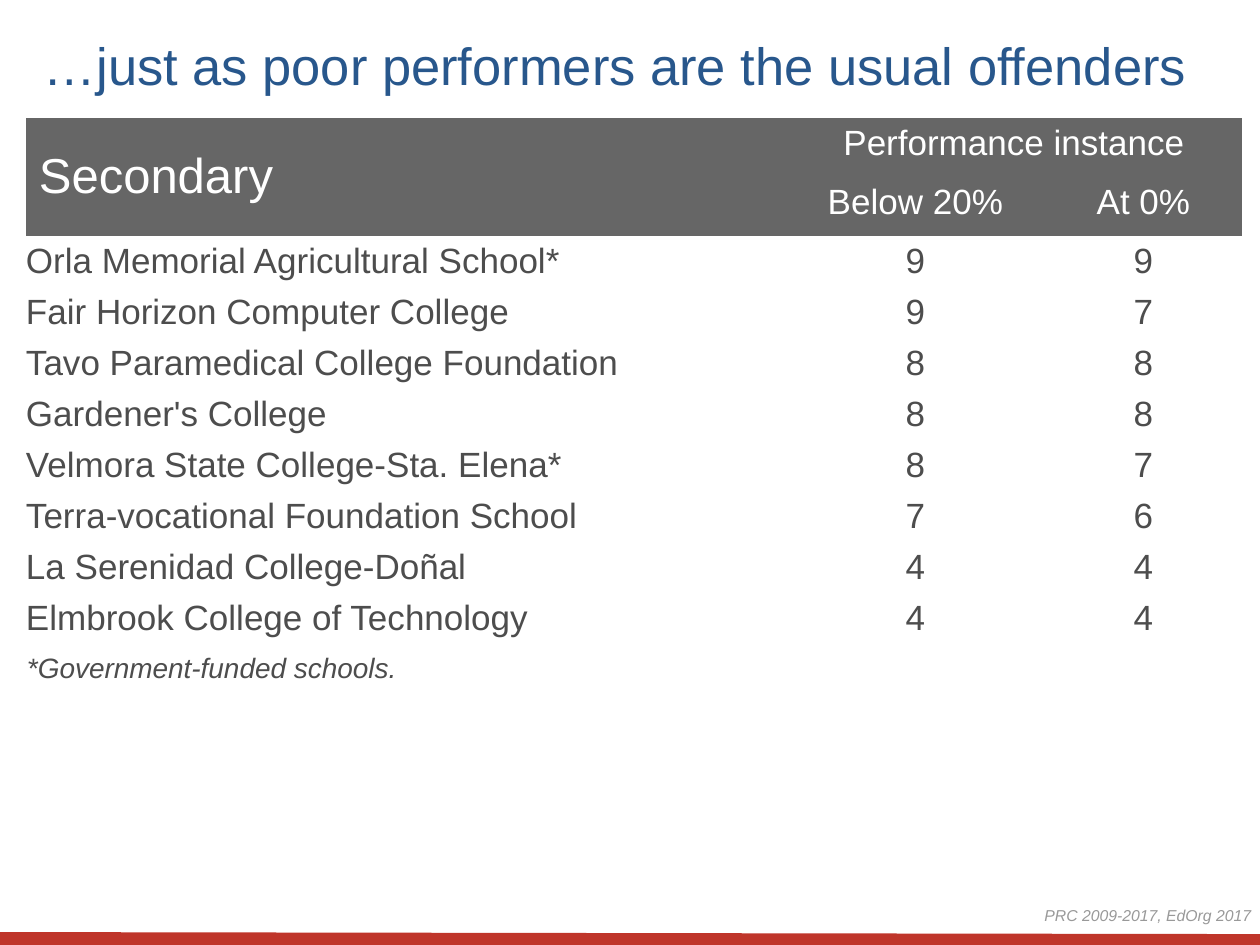
from lxml import etree
from pptx import Presentation
from pptx.dml.color import RGBColor
from pptx.enum.shapes import MSO_CONNECTOR
from pptx.enum.text import MSO_ANCHOR, PP_ALIGN
from pptx.oxml.ns import qn
from pptx.util import Pt

LEFT, CENTER, RIGHT = PP_ALIGN.LEFT, PP_ALIGN.CENTER, PP_ALIGN.RIGHT
MIDDLE = MSO_ANCHOR.MIDDLE
STRAIGHT = MSO_CONNECTOR.STRAIGHT
PX = 914400 // 126
FONT = "Arial"
PLAIN_TABLE = "{2D5ABB26-0587-4C30-8999-92F81FD0307C}"

COLORS = {
    "title": "28578C",
    "header": "666666",
    "header_text": "FFFFFF",
    "body": "4D4D4D",
    "source": "999999",
    "rule": "BF352A",
}

TITLE = "…just as poor performers are the usual offenders"
SOURCE = "PRC 2009-2017, EdOrg 2017"
FOOTNOTE = "*Government-funded schools."
HEADERS = [
    (0, 0, "Secondary", 28, LEFT),
    (0, 1, "Performance instance", 20, CENTER),
    (1, 1, "Below 20%", 20, CENTER),
    (1, 2, "At 0%", 20, CENTER),
]
SCHOOLS = [
    ("Orla Memorial Agricultural School*", 9, 9),
    ("Fair Horizon Computer College", 9, 7),
    ("Tavo Paramedical College Foundation", 8, 8),
    ("Gardener's College", 8, 8),
    ("Velmora State College-Sta. Elena*", 8, 7),
    ("Terra-vocational Foundation School", 7, 6),
    ("La Serenidad College-Doñal", 4, 4),
    ("Elmbrook College of Technology", 4, 4),
]
HEADER_ROWS = 2
COLUMNS = [760, 259, 197]
ROW_HEIGHT = 51
TABLE_LEFT, TABLE_TOP = 26, 118


def px(value):
    return value * PX


def write(frame, text, color, align=LEFT, **font_values):
    para = frame.paragraphs[0]
    para.alignment = align
    span = para.add_run()
    span.text = text
    span.font.color.rgb = RGBColor.from_string(COLORS[color])
    for name, value in {"name": FONT, **font_values}.items():
        setattr(span.font, name, value)


def set_margins(target, across, down):
    for side, value in zip(("left", "right", "top", "bottom"), (across, across, down, down)):
        setattr(target, f"margin_{side}", px(value))


def add_text(page, bounds, margins, text, color, **format_values):
    box = page.shapes.add_textbox(*map(px, bounds))
    box.text_frame.word_wrap = True
    set_margins(box.text_frame, *margins)
    write(box.text_frame, text, color, **format_values)


def add_rule(page):
    rule = page.shapes.add_connector(STRAIGHT, *map(px, (-1, 940, 1261, 942)))
    rule.line.color.rgb = RGBColor.from_string(COLORS["rule"])
    rule.line.width = Pt(9)
    etree.SubElement(rule._element.spPr, qn("a:effectLst"))


def add_school_table(page):
    row_count = HEADER_ROWS + len(SCHOOLS) + 1
    bounds = TABLE_LEFT, TABLE_TOP, sum(COLUMNS), row_count * ROW_HEIGHT
    table = page.shapes.add_table(row_count, len(COLUMNS), *map(px, bounds)).table
    table._tbl.tblPr.find(qn("a:tableStyleId")).text = PLAIN_TABLE
    table.first_row = table.horz_banding = False
    for column, width in zip(table.columns, COLUMNS):
        column.width = px(width)

    for row_index, row in enumerate(table.rows):
        row.height = px(ROW_HEIGHT)
        for cell in row.cells:
            cell.vertical_anchor = MIDDLE
            if row_index < HEADER_ROWS:
                set_margins(cell, 13, 4)
                cell.fill.solid()
                cell.fill.fore_color.rgb = RGBColor.from_string(COLORS["header"])
            else:
                set_margins(cell, 0, 0)
                cell.fill.background()

    table.cell(0, 0).merge(table.cell(1, 0))
    table.cell(0, 1).merge(table.cell(0, 2))
    for row_index, column_index, text, size, align in HEADERS:
        frame = table.cell(row_index, column_index).text_frame
        write(frame, text, "header_text", align, size=Pt(size))
    for row_index, school in enumerate(SCHOOLS, HEADER_ROWS):
        for column_index, value in enumerate(school):
            align = CENTER if column_index else LEFT
            frame = table.cell(row_index, column_index).text_frame
            write(frame, str(value), "body", align, size=Pt(20))

    footnote = table.cell(row_count - 1, 0)
    set_margins(footnote, 1, 0)
    write(footnote.text_frame, FOOTNOTE, "body", size=Pt(16), italic=True)


def main():
    deck = Presentation()
    deck.slide_width, deck.slide_height = px(1260), px(945)
    page = deck.slides.add_slide(deck.slide_layouts[6])
    add_text(page, (31, 27, 1212, 223), (13, 6), TITLE, "title", size=Pt(30))
    add_rule(page)
    add_school_table(page)
    add_text(page, (780, 896, 484, 43), (13, 13), SOURCE, "source",
             align=RIGHT, size=Pt(9), italic=True)
    deck.save("out.pptx")


if __name__ == "__main__":
    main()
